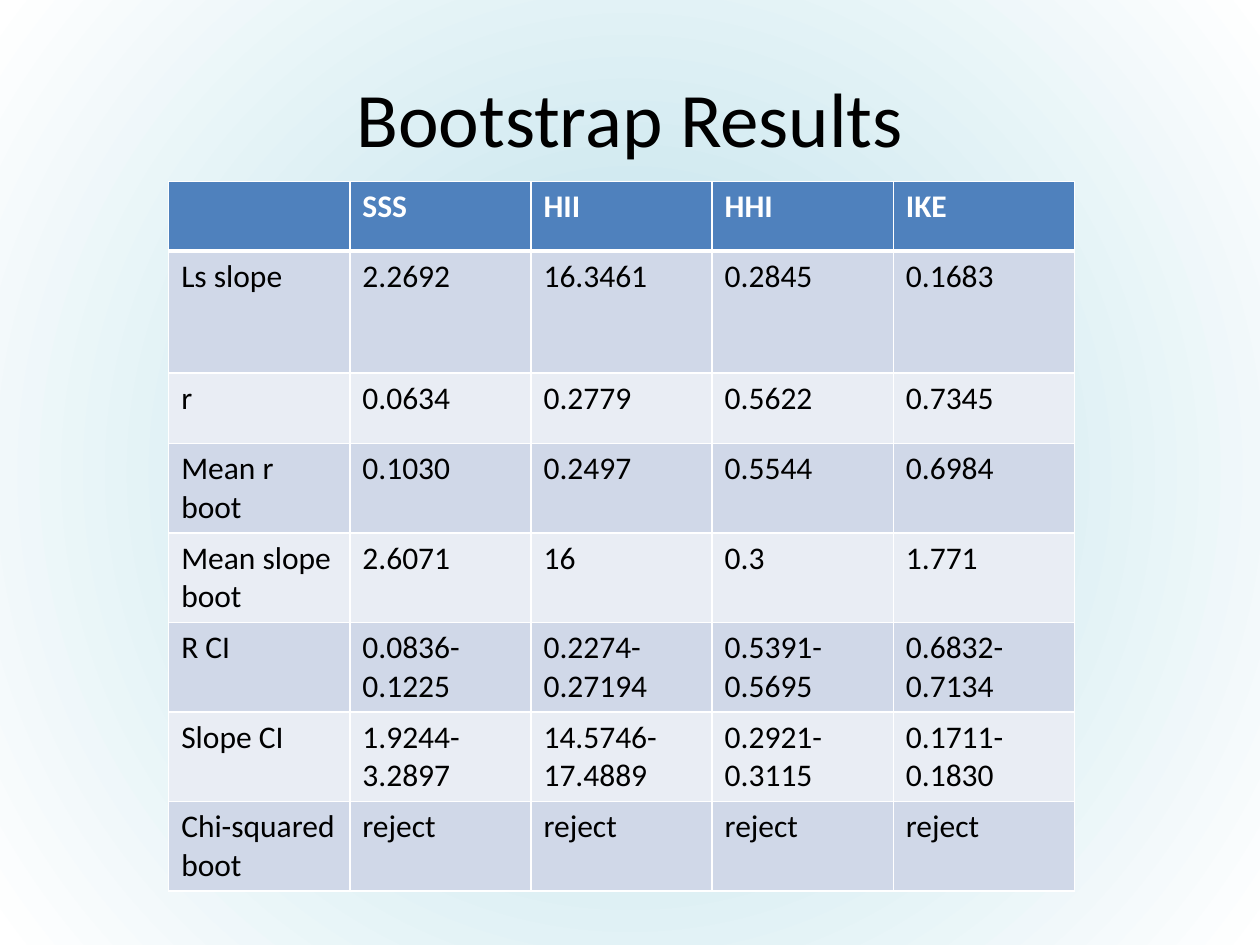
from lxml import etree
from pptx import Presentation
from pptx.dml.color import RGBColor
from pptx.enum.text import MSO_ANCHOR, PP_ALIGN
from pptx.oxml.ns import qn
from pptx.util import Cm, Pt

MIDDLE = MSO_ANCHOR.MIDDLE
CENTER = PP_ALIGN.CENTER

COLORS = {
    "glow": "B7DEE8",
    "white": "FFFFFF",
    "black": "000000",
    "header": "4F81BD",
    "band_dark": "D0D8E8",
    "band_light": "E9EDF4",
}

ROWS = [
    ["", "SSS", "HII", "HHI", "IKE"],
    ["Ls slope", "2.2692", "16.3461", "0.2845", "0.1683"],
    ["r", "0.0634", "0.2779", "0.5622", "0.7345"],
    ["Mean r boot", "0.1030", "0.2497", "0.5544", "0.6984"],
    ["Mean slope boot", "2.6071", "16", "0.3", "1.771"],
    ["R CI", "0.0836-\n0.1225", "0.2274-\n0.27194", "0.5391-\n0.5695", "0.6832-\n0.7134"],
    ["Slope CI", "1.9244-\n3.2897", "14.5746-\n17.4889", "0.2921-\n0.3115", "0.1711-\n0.1830"],
    ["Chi-squared boot"] + ["reject"] * 4,
]
ROW_HEIGHTS = [1.4, 2.46] + [1.42] * 6


class SlideBuilder:
    font = "Calibri"

    def __init__(self, prs):
        self.s = prs.slides.add_slide(prs.slide_layouts[6])

    def color(self, name):
        return RGBColor.from_string(COLORS[name])

    def background(self, inner, outer):
        fill = self.s.background.fill
        fill.gradient()
        for stop, name in zip(fill.gradient_stops, (inner, outer)):
            stop.color.rgb = self.color(name)
        grad = next(self.s.element.iter(qn("a:gradFill")))
        grad.remove(grad.find(qn("a:lin")))
        circle = etree.SubElement(grad, qn("a:path"), {"path": "circle"})
        etree.SubElement(circle, qn("a:fillToRect"),
                         l="50000", t="50000", r="50000", b="50000")

    def add_text(self, tf, text, size, color, bold=False, align=None):
        for i, line in enumerate(text.split("\n")):
            p = tf.paragraphs[0] if i == 0 else tf.add_paragraph()
            p.alignment = align
            r = p.add_run()
            r.text = line
            r.font.name = self.font
            r.font.size = Pt(size)
            r.font.bold = bold
            r.font.color.rgb = self.color(color)

    def title(self, text, left, top, width, height):
        sp = self.s.shapes.add_textbox(Cm(left), Cm(top), Cm(width), Cm(height))
        tf = sp.text_frame
        tf.word_wrap = True
        tf.vertical_anchor = MIDDLE
        self.add_text(tf, text, 44, "black", align=CENTER)

    def borders(self, cell, top, bottom):
        tcPr = cell._tc.get_or_add_tcPr()
        for side, width in (("L", 1), ("R", 1), ("T", top), ("B", bottom)):
            ln = etree.SubElement(tcPr, qn(f"a:ln{side}"), w=str(Pt(width)))
            fill = etree.SubElement(ln, qn("a:solidFill"))
            etree.SubElement(fill, qn("a:srgbClr"), val=COLORS["white"])

    def table(self, rows, heights, left, top, width):
        frame = self.s.shapes.add_table(len(rows), len(rows[0]), Cm(left), Cm(top),
                                        Cm(width), Cm(sum(heights)))
        table = frame.table
        for i, (values, height) in enumerate(zip(rows, heights)):
            table.rows[i].height = Cm(height)
            header = i == 0
            band = "header" if header else "band_dark" if i % 2 else "band_light"
            for j, text in enumerate(values):
                cell = table.cell(i, j)
                self.borders(cell, 3 if i == 1 else 1, 3 if header else 1)
                cell.fill.solid()
                cell.fill.fore_color.rgb = self.color(band)
                if text:
                    self.add_text(cell.text_frame, text, 18,
                                  "white" if header else "black", bold=header)


def main():
    prs = Presentation()
    prs.slide_width, prs.slide_height = Cm(25.4), Cm(19.05)
    slide = SlideBuilder(prs)
    slide.background("glow", "white")
    slide.table(ROWS, ROW_HEIGHTS, 3.4, 3.66, 18.26)
    slide.title("Bootstrap Results", 1.27, 0.76, 22.86, 3.18)
    prs.save("out.pptx")


if __name__ == "__main__":
    main()
